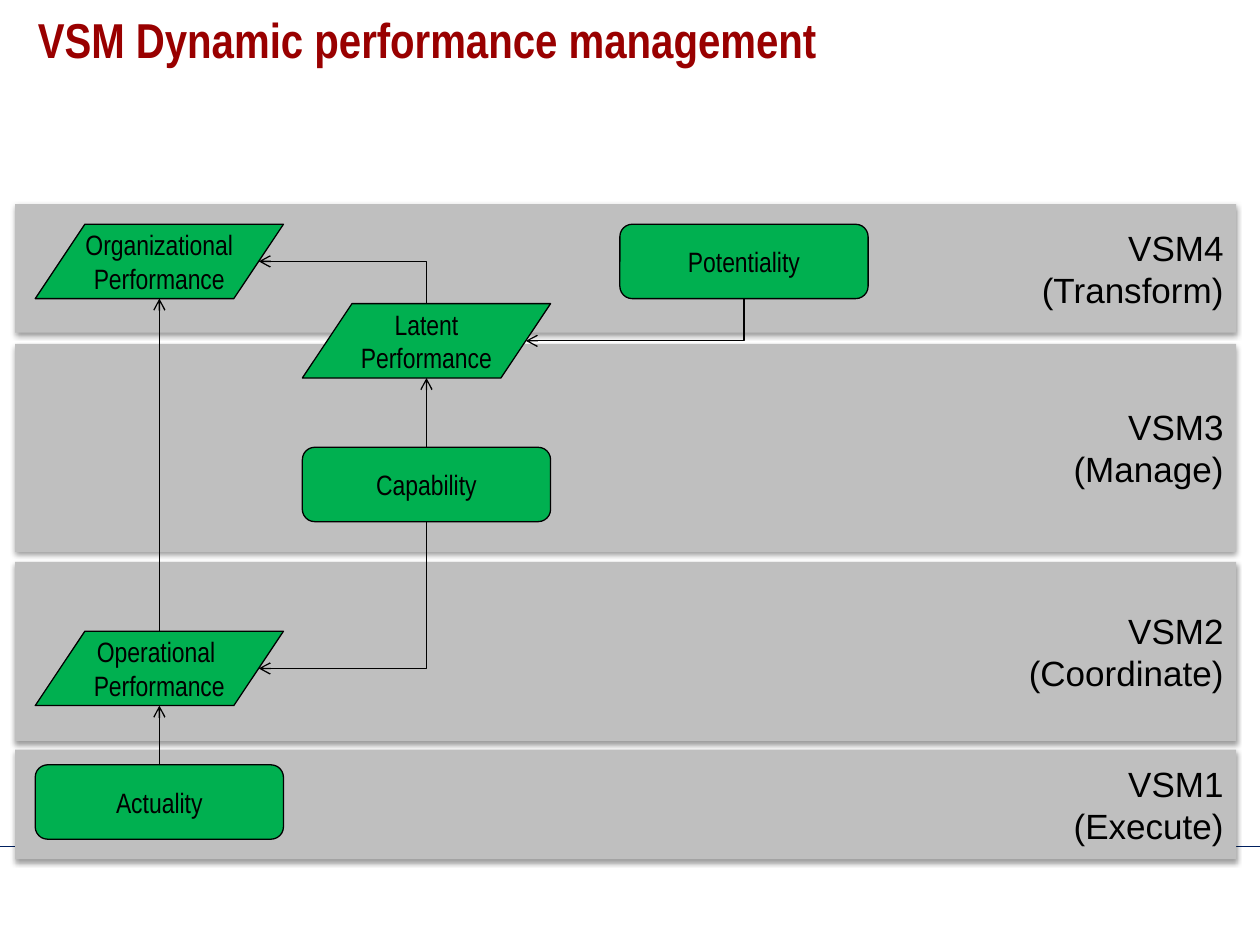
from dataclasses import dataclass

import lxml.etree
import pptx
import pptx.dml.color
import pptx.enum.dml
import pptx.enum.shapes
import pptx.enum.text
import pptx.oxml.ns
import pptx.util

Inches = pptx.util.Inches
Pt = pptx.util.Pt
RGBColor = pptx.dml.color.RGBColor
Geometry = pptx.enum.shapes.MSO_SHAPE
Connector = pptx.enum.shapes.MSO_CONNECTOR
Align = pptx.enum.text.PP_ALIGN
Anchor = pptx.enum.text.MSO_ANCHOR
qn = pptx.oxml.ns.qn

BLACK = RGBColor(0x00, 0x00, 0x00)
GREY = RGBColor(0xBF, 0xBF, 0xBF)
GREEN = RGBColor(0x00, 0xB0, 0x50)
DARK_RED = RGBColor(0x99, 0x00, 0x00)
NAVY = RGBColor(0x00, 0x20, 0x60)

BAND_LEFT, BAND_WIDTH = 0.12, 9.69
NODE_WIDTH, NODE_HEIGHT = 1.97, 0.59
COLUMNS = (0.28, 2.4, 4.92)
HANGING = 0.38
STATE = Geometry.ROUNDED_RECTANGLE
PERFORMANCE = Geometry.FLOWCHART_DATA
SITES = {
    STATE: {"top": 0, "bottom": 2},
    PERFORMANCE: {"top": 1, "bottom": 4, "right": 5},
}


@dataclass(frozen=True)
class Band:
    system: str
    role: str
    top: float
    height: float


@dataclass(frozen=True)
class Node:
    lines: tuple[str, ...]
    geometry: Geometry
    column: int
    top: float

    def site(self, side: str) -> tuple[float, float]:
        across, down = {"top": (0.5, 0), "bottom": (0.5, 1), "right": (0.9, 0.5)}[side]
        return COLUMNS[self.column] + across * NODE_WIDTH, self.top + down * NODE_HEIGHT


@dataclass(frozen=True)
class Flow:
    source: str
    source_side: str
    target: str
    target_side: str


BANDS = (
    Band("VSM4", "(Transform)", 1.62, 1.02),
    Band("VSM3", "(Manage)", 2.73, 1.65),
    Band("VSM2", "(Coordinate)", 4.46, 1.42),
    Band("VSM1", "(Execute)", 5.95, 0.87),
)
NODES = {
    "organizational": Node(("Organizational", "Performance"), PERFORMANCE, 0, 1.78),
    "operational": Node(("Operational ", "Performance"), PERFORMANCE, 0, 5.01),
    "latent": Node(("Latent", "Performance"), PERFORMANCE, 1, 2.41),
    "actuality": Node(("Actuality",), STATE, 0, 6.07),
    "capability": Node(("Capability",), STATE, 1, 3.55),
    "potentiality": Node(("Potentiality",), STATE, 2, 1.78),
}
FLOWS = (
    Flow("actuality", "top", "operational", "bottom"),
    Flow("capability", "bottom", "operational", "right"),
    Flow("capability", "top", "latent", "bottom"),
    Flow("potentiality", "bottom", "latent", "right"),
    Flow("operational", "top", "organizational", "bottom"),
    Flow("latent", "top", "organizational", "right"),
)


def write_lines(frame, lines: tuple[str, ...], font_name: str, size: int,
                color: RGBColor, align: Align, hanging: float = 0) -> None:
    for index, line in enumerate(lines):
        paragraph = frame.paragraphs[0] if index == 0 else frame.add_paragraph()
        paragraph.alignment = align
        if hanging:
            properties = paragraph._p.get_or_add_pPr()
            properties.set("marL", str(Inches(hanging)))
            properties.set("indent", str(-Inches(hanging)))
        run = paragraph.add_run()
        run.text = line
        run.font.name = font_name
        run.font.size = Pt(size)
        run.font.color.rgb = color


def add_box(slide, geometry: Geometry, left: float, top: float,
            width: float, height: float, fill: RGBColor):
    box = slide.shapes.add_shape(
        geometry, Inches(left), Inches(top), Inches(width), Inches(height))
    box.shadow.inherit = False
    box.fill.solid()
    box.fill.fore_color.rgb = fill
    box.text_frame.word_wrap = True
    box.text_frame.vertical_anchor = Anchor.MIDDLE
    return box


def draw_band(slide, band: Band) -> None:
    box = add_box(slide, Geometry.RECTANGLE, BAND_LEFT, band.top,
                  BAND_WIDTH, band.height, GREY)
    box.line.fill.background()
    effects = box._element.spPr.find(qn("a:effectLst"))
    shadow = lxml.etree.SubElement(
        effects, qn("a:outerShdw"), blurRad=str(Pt(3.1)), dist=str(Pt(1.6)),
        dir="5400000", rotWithShape="0")
    tint = lxml.etree.SubElement(shadow, qn("a:srgbClr"), val=str(BLACK))
    lxml.etree.SubElement(tint, qn("a:alpha"), val="38000")
    write_lines(box.text_frame, (band.system, band.role), "Arial", 20, BLACK, Align.RIGHT)


def draw_node(slide, node: Node):
    box = add_box(slide, node.geometry, COLUMNS[node.column], node.top,
                  NODE_WIDTH, NODE_HEIGHT, GREEN)
    box.line.color.rgb = BLACK
    box.line.width = Pt(0.75)
    frame = box.text_frame
    frame.margin_left = frame.margin_right = frame.margin_top = frame.margin_bottom = 0
    write_lines(frame, node.lines, "Arial Narrow", 16, BLACK, Align.CENTER, HANGING)
    return box


def add_line(slide, kind: Connector, start: tuple[float, float],
             end: tuple[float, float], color: RGBColor):
    line = slide.shapes.add_connector(
        kind, *(Inches(value) for value in (*start, *end)))
    line.line.color.rgb = color
    line.line.width = Pt(0.75)
    lxml.etree.SubElement(line._element.spPr, qn("a:effectLst"))
    return line


def draw_flow(slide, flow: Flow, boxes: dict) -> None:
    source, target = NODES[flow.source], NODES[flow.target]
    start, end = source.site(flow.source_side), target.site(flow.target_side)
    if flow.target_side == "right":
        length, depth = abs(end[1] - start[1]), abs(end[0] - start[0])
        left = (start[0] + end[0] - length) / 2
        top = (start[1] + end[1] - depth) / 2
        arrow = add_line(slide, Connector.ELBOW, (left, top),
                         (left + length, top + depth), BLACK)
        properties = arrow._element.spPr
        properties.find(qn("a:prstGeom")).set("prst", "bentConnector2")
        frame = properties.find(qn("a:xfrm"))
        upward = end[1] < start[1]
        frame.set("rot", "16200000" if upward else "5400000")
        if upward:
            frame.set("flipV", "1")
    else:
        arrow = add_line(slide, Connector.STRAIGHT, start, end, BLACK)
    lxml.etree.SubElement(arrow.line._get_or_add_ln(), qn("a:tailEnd"), type="arrow")
    glue = arrow._element.find(qn("p:nvCxnSpPr")).find(qn("p:cNvCxnSpPr"))
    for tag, name, node, side in (
        ("a:stCxn", flow.source, source, flow.source_side),
        ("a:endCxn", flow.target, target, flow.target_side),
    ):
        lxml.etree.SubElement(glue, qn(tag), id=str(boxes[name].shape_id),
                              idx=str(SITES[node.geometry][side]))


def draw_title(slide) -> None:
    title = slide.shapes.title
    title.left, title.top = Inches(0.2), Inches(0.08)
    title.width, title.height = Inches(9.61), Inches(0.83)
    frame = title.text_frame
    frame.vertical_anchor = Anchor.TOP
    frame.word_wrap = True
    write_lines(frame, ("VSM Dynamic performance management",),
                "Arial Narrow", 28, DARK_RED, Align.LEFT)
    frame.paragraphs[0].line_spacing = 0.9
    frame.paragraphs[0].runs[0].font.bold = True


def main() -> None:
    presentation = pptx.Presentation()
    presentation.slide_width, presentation.slide_height = Inches(10), Inches(7.5)
    slide = presentation.slides.add_slide(presentation.slide_layouts[5])
    add_line(slide, Connector.STRAIGHT, (0, 6.72), (10, 6.72), NAVY)
    for band in BANDS:
        draw_band(slide, band)
    draw_title(slide)
    boxes = {name: draw_node(slide, node) for name, node in NODES.items()}
    for flow in FLOWS:
        draw_flow(slide, flow, boxes)
    presentation.save("out.pptx")


if __name__ == "__main__":
    main()
